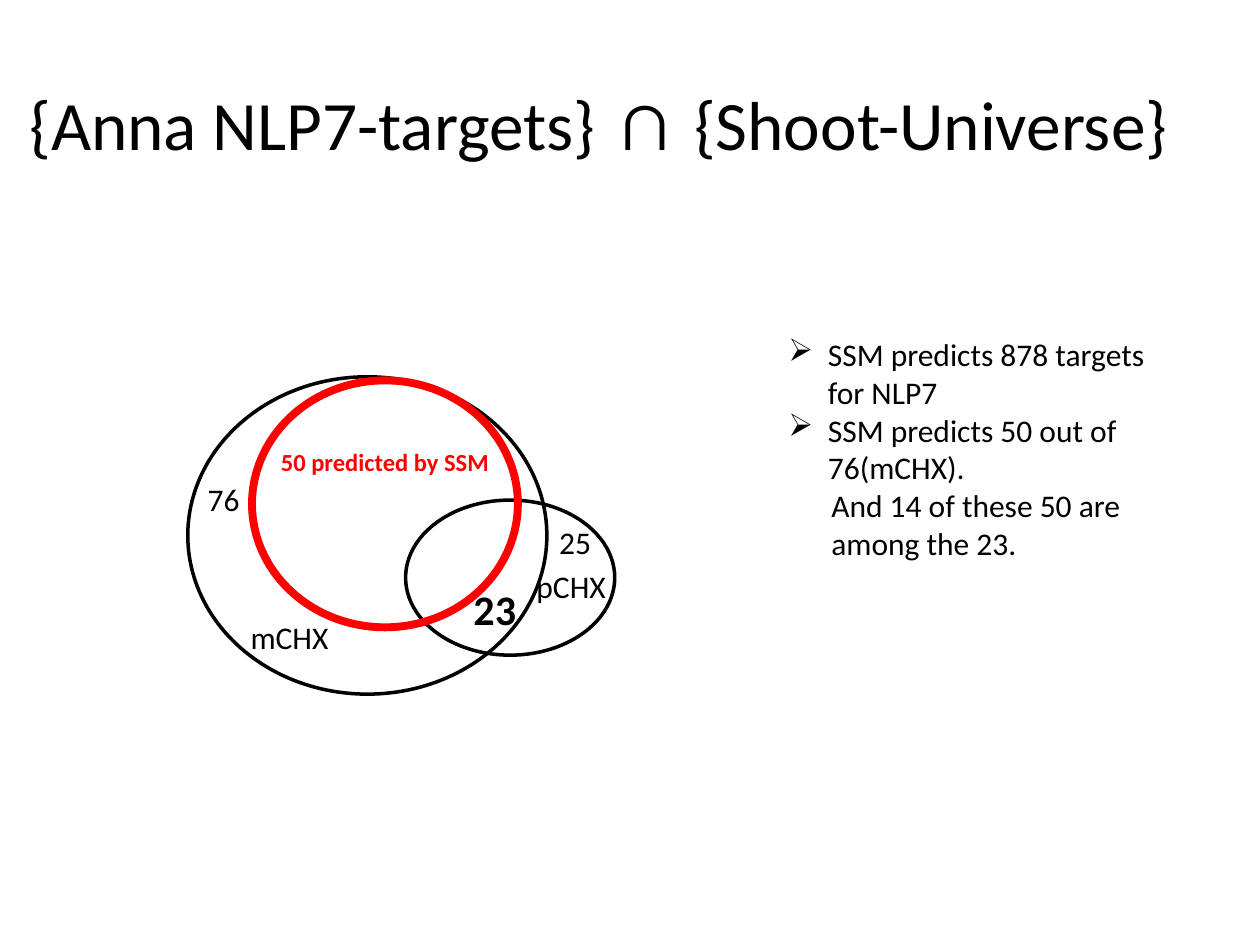
from dataclasses import dataclass

import pptx
import pptx.dml.color
import pptx.enum.shapes
import pptx.enum.text
import pptx.oxml
import pptx.oxml.ns
import pptx.util

Pt = pptx.util.Pt
FONT = "Calibri"
COLORS = {"black": "000000", "red": "FF0000"}


@dataclass
class Ellipse:
    x: float
    y: float
    w: float
    h: float
    color: str = "black"
    weight: float = 2


@dataclass
class Label:
    text: str
    x: float
    y: float
    w: float
    h: float
    size: float = 18
    color: str = "black"
    bold: bool = False


@dataclass
class Note:
    text: str
    indent: float
    bullet: str = ""


SETS = [
    Ellipse(107.3, 215.3, 205.2, 181.4),
    Ellipse(231.8, 285.8, 119.5, 88.6),
]
SSM_SET = Ellipse(144, 217.4, 151.9, 141.1, "red", 4.5)
SET_LABELS = [
    Label("76", 111.6, 270.7, 33.1, 28.8),
    Label("25", 312.5, 295.2, 33.1, 28.8),
    Label("mCHX", 136.1, 349.9, 59.8, 28.8),
    Label("pCHX", 299.5, 320.4, 54.7, 28.8),
]
OVERLAP_LABELS = [
    Label("23", 263.5, 329.8, 38.9, 36, 24, bold=True),
    Label("50 predicted by SSM", 153.4, 252, 159.1, 24.5, 14, "red", True),
]
NOTES = [
    Note("SSM predicts 878 targets for NLP7", 22.5, "➢"),
    Note("SSM predicts 50 out of 76(mCHX).", 22.5, "➢"),
    Note("And 14 of these 50 are", 24.5),
    Note("among the 23.", 24.5),
]
TITLE_RUNS = [("{Anna NLP7-targets}", 39.6), (" ∩ ", 48.6), ("{Shoot-Universe}", 39.6)]


def rgb(name: str) -> pptx.dml.color.RGBColor:
    return pptx.dml.color.RGBColor.from_string(COLORS[name])


def add_run(p, text: str, *, size: float = 18, color: str = "black", bold: bool = False) -> None:
    r = p.add_run()
    r.text = text
    r.font.name = FONT
    r.font.size = Pt(size)
    r.font.bold = bold
    r.font.color.rgb = rgb(color)


def add_ellipse(s, e: Ellipse) -> None:
    sp = s.shapes.add_shape(
        pptx.enum.shapes.MSO_SHAPE.OVAL, Pt(e.x), Pt(e.y), Pt(e.w), Pt(e.h))
    sp.shadow.inherit = False
    sp.fill.background()
    sp.line.color.rgb = rgb(e.color)
    sp.line.width = Pt(e.weight)


def add_label(s, label: Label) -> None:
    sp = s.shapes.add_textbox(Pt(label.x), Pt(label.y), Pt(label.w), Pt(label.h))
    sp.text_frame.word_wrap = False
    add_run(sp.text_frame.paragraphs[0], label.text,
            size=label.size, color=label.color, bold=label.bold)


def set_indent(p, note: Note) -> None:
    pPr = p._p.get_or_add_pPr()
    pPr.set("marL", str(Pt(note.indent)))
    if note.bullet:
        pPr.set("indent", str(-Pt(note.indent)))
        bu = pptx.oxml.parse_xml(
            f'<a:buChar {pptx.oxml.ns.nsdecls("a")} char="{note.bullet}"/>')
        pPr.append(bu)


def add_notes_box(s, notes: list[Note]) -> None:
    tf = s.shapes.add_textbox(Pt(443.5), Pt(187.9), Pt(240.5), Pt(138.2)).text_frame
    tf.word_wrap = True
    for i, note in enumerate(notes):
        p = tf.add_paragraph() if i else tf.paragraphs[0]
        set_indent(p, note)
        add_run(p, note.text)


def set_title(s) -> None:
    sp = s.shapes.title
    sp.left, sp.top, sp.width, sp.height = Pt(0), Pt(21.6), Pt(684), Pt(90)
    tf = sp.text_frame
    tf.vertical_anchor = pptx.enum.text.MSO_ANCHOR.MIDDLE
    tf.auto_size = pptx.enum.text.MSO_AUTO_SIZE.NONE
    p = tf.paragraphs[0]
    p.alignment = pptx.enum.text.PP_ALIGN.CENTER
    for text, size in TITLE_RUNS:
        add_run(p, text, size=size)


def main() -> None:
    prs = pptx.Presentation()
    prs.slide_width, prs.slide_height = Pt(720), Pt(540)
    s = prs.slides.add_slide(prs.slide_layouts[5])
    set_title(s)
    for e in SETS:
        add_ellipse(s, e)
    for label in SET_LABELS:
        add_label(s, label)
    add_notes_box(s, NOTES)
    add_ellipse(s, SSM_SET)
    for label in OVERLAP_LABELS:
        add_label(s, label)
    prs.save("out.pptx")


if __name__ == "__main__":
    main()
